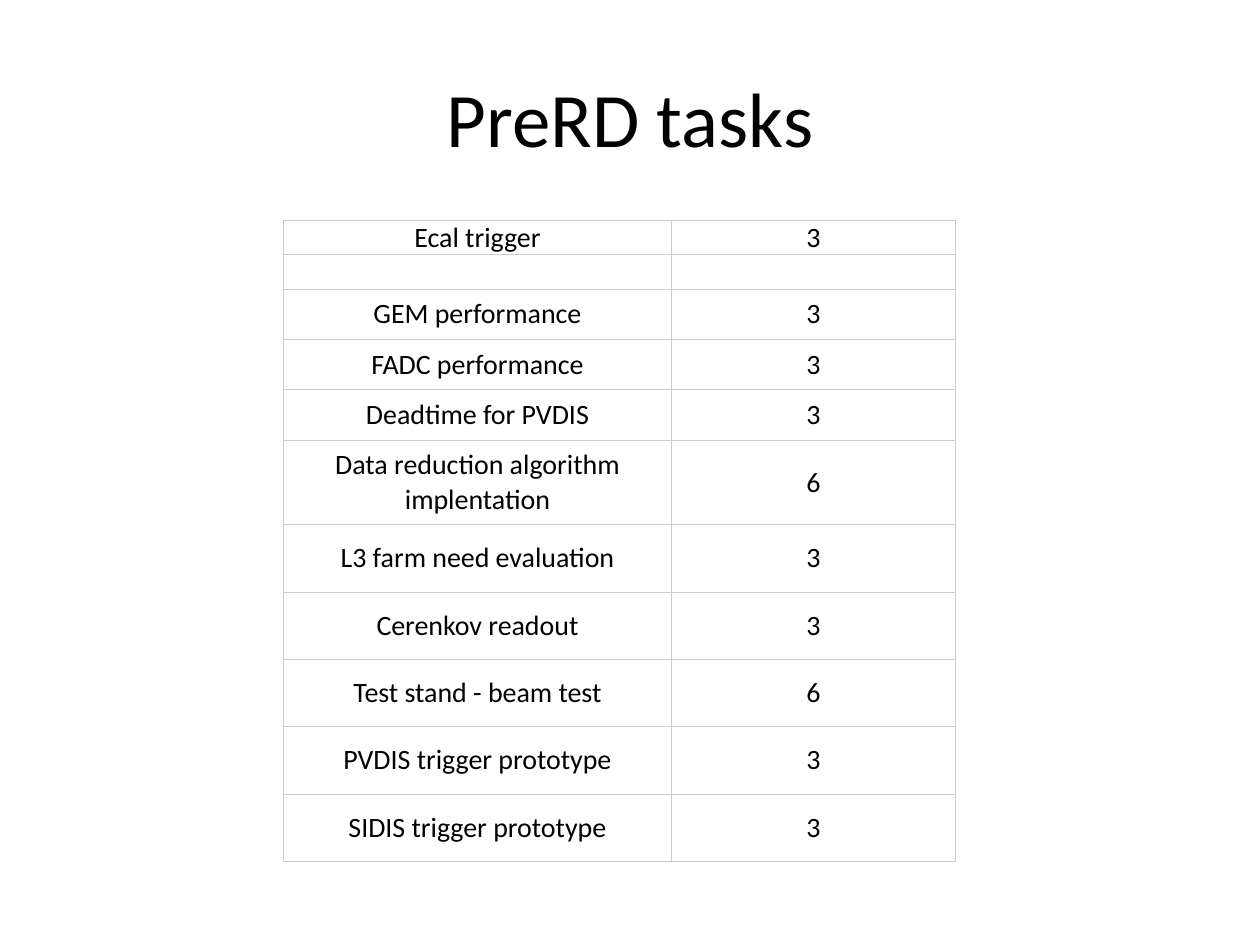
import dataclasses

import lxml.etree
import pptx
import pptx.dml.color
import pptx.enum.text
import pptx.oxml.ns
import pptx.util

Inches = pptx.util.Inches
Pt = pptx.util.Pt
RGBColor = pptx.dml.color.RGBColor
qn = pptx.oxml.ns.qn


@dataclasses.dataclass(frozen=True)
class Theme:
    font: str = "Calibri"
    text: str = "000000"
    background: str = "FFFFFF"
    border: str = "CCCCCC"
    border_width: float = 0.5
    title_size: int = 44
    table_size: int = 16


theme = Theme()

tasks = [
    ("Ecal trigger", "3", 0.27),
    ("", "", 0.27),
    ("GEM performance", "3", 0.4),
    ("FADC performance", "3", 0.4),
    ("Deadtime for PVDIS", "3", 0.4),
    ("Data reduction algorithm implentation", "6", 0.67),
    ("L3 farm need evaluation", "3", 0.535),
    ("Cerenkov readout", "3", 0.535),
    ("Test stand - beam test", "6", 0.535),
    ("PVDIS trigger prototype", "3", 0.535),
    ("SIDIS trigger prototype", "3", 0.535),
]
column_widths = [3.08, 2.25]


def write_centred(paragraph, text, size):
    paragraph.text = text
    paragraph.alignment = pptx.enum.text.PP_ALIGN.CENTER
    for run in paragraph.runs:
        run.font.name = theme.font
        run.font.size = Pt(size)
        run.font.color.rgb = RGBColor.from_string(theme.text)
    if not text:
        lxml.etree.SubElement(paragraph._p, qn("a:endParaRPr"), sz=str(size * 100))


def add_borders(cell):
    properties = cell._tc.get_or_add_tcPr()
    for side in ("L", "R", "T", "B"):
        line = lxml.etree.SubElement(
            properties, qn(f"a:ln{side}"), w=str(Pt(theme.border_width))
        )
        fill = lxml.etree.SubElement(line, qn("a:solidFill"))
        lxml.etree.SubElement(fill, qn("a:srgbClr"), val=theme.border)


presentation = pptx.Presentation()
presentation.slide_width = Inches(10)
presentation.slide_height = Inches(7.5)
slide = presentation.slides.add_slide(presentation.slide_layouts.get_by_name("Title Only"))
slide.background.fill.solid()
slide.background.fill.fore_color.rgb = RGBColor.from_string(theme.background)

title = slide.shapes.title
title.left, title.top = Inches(0.5), Inches(0.3)
title.width, title.height = Inches(9), Inches(1.25)
title.text_frame.vertical_anchor = pptx.enum.text.MSO_ANCHOR.MIDDLE
write_centred(title.text_frame.paragraphs[0], "PreRD tasks", theme.title_size)

table = slide.shapes.add_table(
    len(tasks),
    len(column_widths),
    Inches(2.25),
    Inches(1.75),
    Inches(sum(column_widths)),
    Inches(sum(height for *_, height in tasks)),
).table
table.first_row = False
table.horz_banding = False

for column, width in zip(table.columns, column_widths):
    column.width = Inches(width)

for row, (*texts, height) in zip(table.rows, tasks):
    row.height = Inches(height)
    for cell, text in zip(row.cells, texts):
        add_borders(cell)
        cell.fill.background()
        cell.vertical_anchor = pptx.enum.text.MSO_ANCHOR.MIDDLE
        cell.margin_left = cell.margin_right = Inches(0.01)
        cell.margin_top = cell.margin_bottom = Inches(0)
        write_centred(cell.text_frame.paragraphs[0], text, theme.table_size)

presentation.save("out.pptx")
